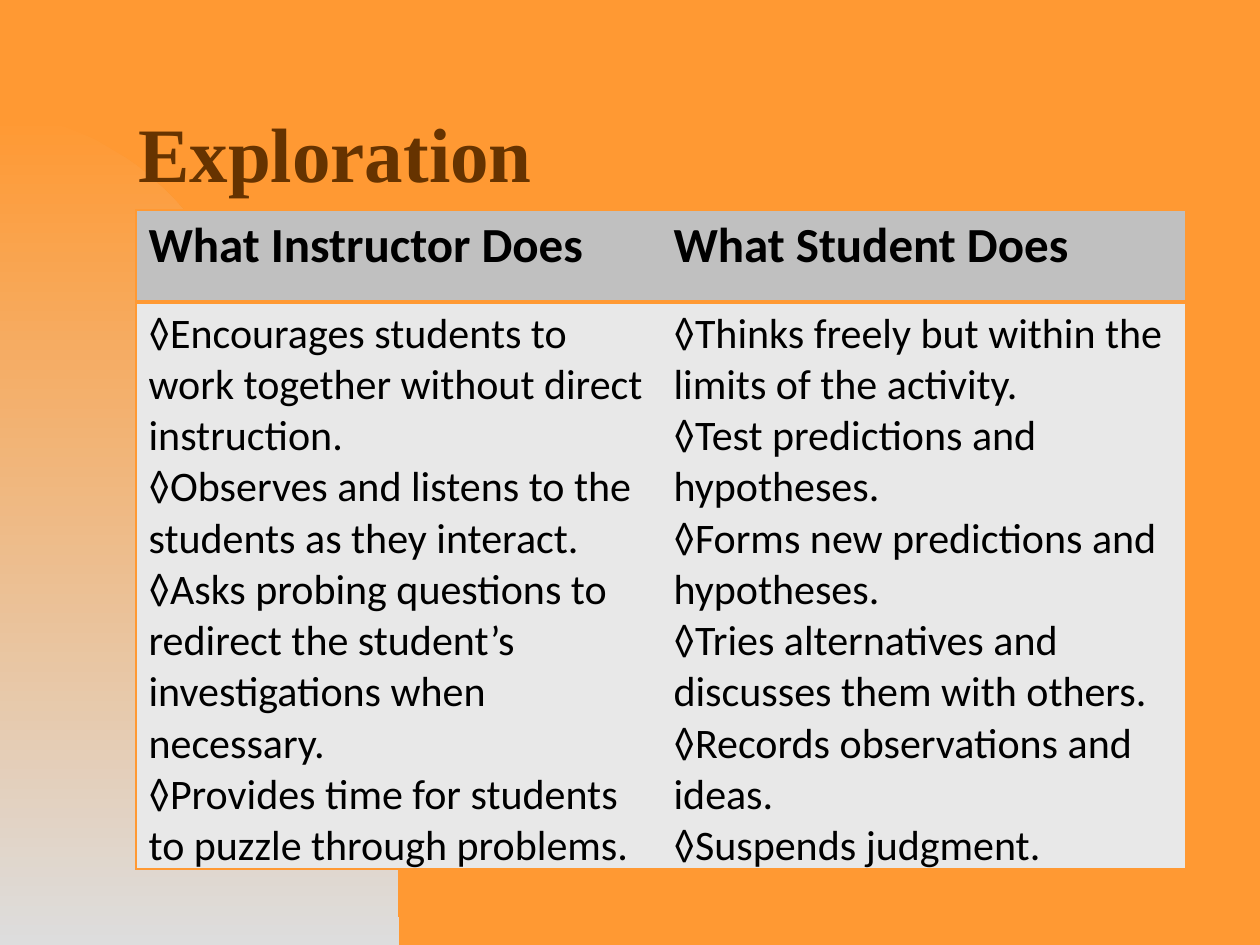
from lxml.etree import SubElement
from pptx import Presentation
from pptx.dml.color import RGBColor
from pptx.enum.text import MSO_ANCHOR as Anchor
from pptx.oxml.ns import qn
from pptx.util import Pt

PX = 914400 / 126
COLORS = {
    "orange": "FF9933",
    "mist": "DDDDDD",
    "brown": "663300",
    "black": "000000",
    "header": "C0C0C0",
    "body": "E8E8E8",
}
HEADINGS = ["What Instructor Does", "What Student Does"]
INSTRUCTOR = [
    "◊Encourages students to work together without direct instruction.",
    "◊Observes and listens to the students as they interact.",
    "◊Asks probing questions to redirect the student’s investigations when necessary.",
    "◊Provides time for students to puzzle through problems.",
]
STUDENT = [
    "◊Thinks freely but within the limits of the activity.",
    "◊Test predictions and hypotheses.",
    "◊Forms new predictions and hypotheses.",
    "◊Tries alternatives and discusses them with others.",
    "◊Records observations and ideas.",
    "◊Suspends judgment.",
]


def emu(px):
    return round(px * PX)


def rgb(name):
    return RGBColor.from_string(COLORS[name])


def curve(start, first, second, end, steps=60):
    """Points along a cubic Bezier curve."""
    points = []
    for step in range(steps + 1):
        t = step / steps
        weights = ((1 - t) ** 3, 3 * t * (1 - t) ** 2, 3 * t * t * (1 - t), t ** 3)
        points.append(tuple(
            sum(w * v for w, v in zip(weights, values))
            for values in zip(start, first, second, end)))
    return points


class Page:
    def __init__(self, deck):
        self.slide = deck.slides.add_slide(deck.slide_layouts[6])
        fill = self.slide.background.fill
        fill.solid()
        fill.fore_color.rgb = rgb("orange")

    def add_lines(self, frame, lines, size, font, color="black", bold=False, spacing=None):
        for index, line in enumerate(lines):
            para = frame.add_paragraph() if index else frame.paragraphs[0]
            if spacing:
                para.line_spacing = spacing
            span = para.add_run()
            span.text = line
            span.font.size = Pt(size)
            span.font.name = font
            span.font.bold = bold
            span.font.color.rgb = rgb(color)

    def gradient_shape(self, points, top, bottom):
        builder = self.slide.shapes.build_freeform(*points[0], scale=PX)
        builder.add_line_segments(points[1:], close=True)
        shape = builder.convert_to_shape()
        shape.shadow.inherit = False
        shape.line.fill.background()
        shape.fill.gradient()
        shape.fill.gradient_angle = 270
        for stop, color, position in zip(shape.fill.gradient_stops, (top, bottom), (0, 1)):
            stop.color.rgb = rgb(color)
            stop.position = position

    def title(self, text, left, top, width, height):
        box = self.slide.shapes.add_textbox(*map(emu, (left, top, width, height)))
        frame = box.text_frame
        frame.word_wrap = True
        frame.vertical_anchor = Anchor.MIDDLE
        self.add_lines(frame, [text], 44, "Times New Roman", "brown", True, 0.7)

    def border(self, cell, side, points):
        properties = cell._tc.get_or_add_tcPr()
        line = SubElement(properties, qn(f"a:ln{side}"), w=str(Pt(points)))
        if points:
            fill = SubElement(line, qn("a:solidFill"))
            SubElement(fill, qn("a:srgbClr"), val=COLORS["orange"])
        else:
            SubElement(line, qn("a:noFill"))

    def table(self, columns, left, top, width, heights):
        frame = self.slide.shapes.add_table(
            2, len(columns), *map(emu, (left, top, width, sum(heights))))
        grid = frame.table
        for row, height in zip(grid.rows, heights):
            row.height = emu(height)
        last = len(columns) - 1
        for col, (heading, points) in enumerate(columns):
            parts = (([heading], 28, True, "header"), (points, 24, False, "body"))
            for row, (lines, size, bold, color) in enumerate(parts):
                cell = grid.cell(row, col)
                # Outer edges are thin, the rule under the header is thick
                self.border(cell, "L", 0 if col else 1)
                self.border(cell, "R", 1 if col == last else 0)
                self.border(cell, "T", 3 if row else 1)
                self.border(cell, "B", 1 if row else 3)
                cell.fill.solid()
                cell.fill.fore_color.rgb = rgb(color)
                self.add_lines(cell.text_frame, lines, size, "Calibri", bold=bold)


def main():
    deck = Presentation()
    deck.slide_width, deck.slide_height = emu(1260), emu(945)
    page = Page(deck)

    # Background arc
    arc = curve((0, 116), (220, 116), (399, 488), (399, 945))
    page.gradient_shape(arc + [(0, 945)], "orange", "mist")

    # Title
    page.title("Exploration", 126, 84, 1092, 158)

    # Comparison table
    page.table(list(zip(HEADINGS, (INSTRUCTOR, STUDENT))), 136, 210, 1050, (92, 567))

    deck.save("out.pptx")


if __name__ == "__main__":
    main()
